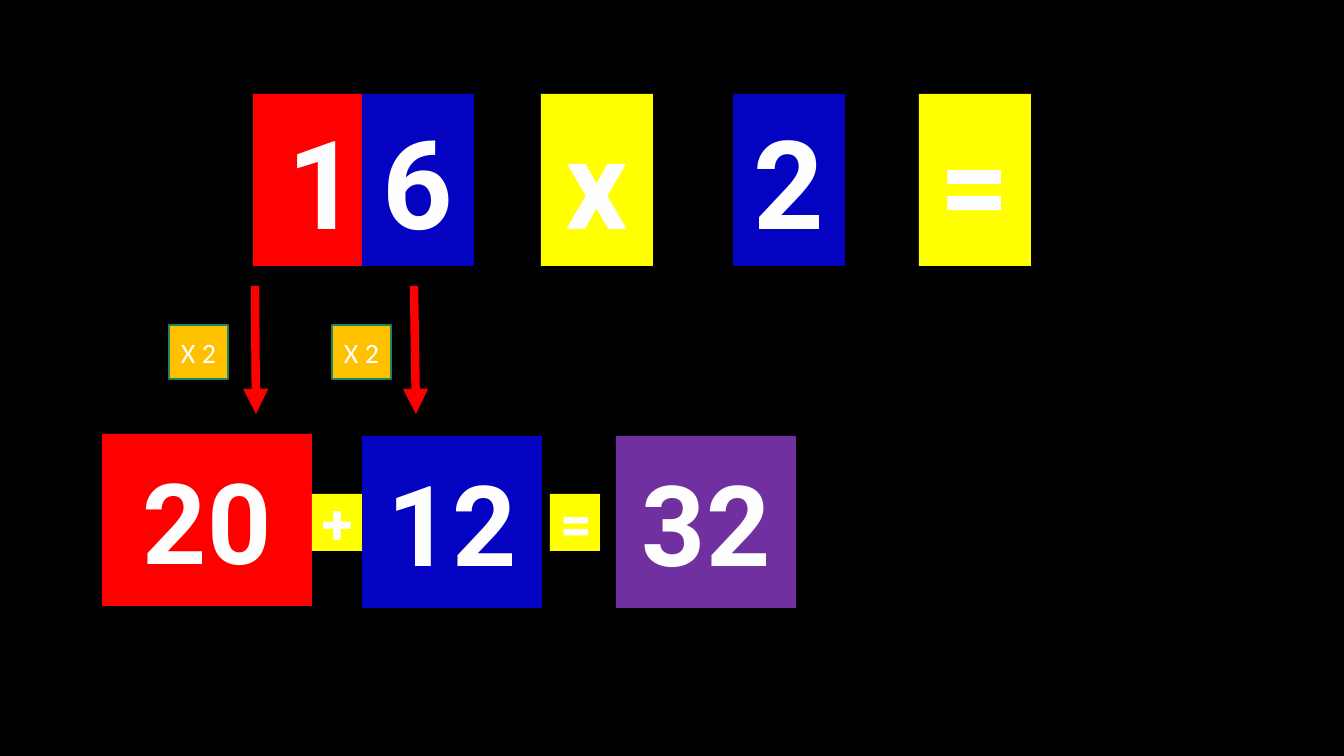
from dataclasses import dataclass

import lxml.etree
import pptx
import pptx.dml.color
import pptx.enum.shapes
import pptx.enum.text
import pptx.oxml
import pptx.oxml.ns
import pptx.util

EMU_PER_PX = 914400 / 100.8
BLACK = "000000"
RED = "FF0000"
BLUE = "0303C1"
YELLOW = "FFFF00"
PURPLE = "7030A0"
ORANGE = "FFC000"
TEAL = "1E8168"
GLYPH_EDGE = "29AF8C"

TILE_HEIGHT = 172
DIGIT_WIDTH = 112
RESULT_WIDTH = 180
PROBLEM_TOP = 94
SIGN_TOP = 494
FACTOR_TOP = 325
ARROW_TOP = 286
ARROW_BOTTOM = 414


@dataclass(frozen=True)
class Tile:
    text: str
    left: int
    top: int
    width: int
    fill: str
    size: int
    height: int = TILE_HEIGHT
    inset_left: int = 10
    inset_right: int = 10


@dataclass(frozen=True)
class Arrow:
    start_x: int
    end_x: int


PROBLEM = [
    Tile("1", 253, PROBLEM_TOP, 109, RED, 88, inset_left=31, inset_right=0),
    Tile("6", 362, PROBLEM_TOP, DIGIT_WIDTH, BLUE, 88),
    Tile("x", 541, PROBLEM_TOP, DIGIT_WIDTH, YELLOW, 88),
    Tile("2", 733, PROBLEM_TOP, DIGIT_WIDTH, BLUE, 88),
    Tile("=", 919, PROBLEM_TOP, DIGIT_WIDTH, YELLOW, 88),
]
ARROWS = [Arrow(255, 256), Arrow(414, 416)]
PARTIAL_PRODUCTS = [
    Tile("20", 102, 434, 210, RED, 80),
    Tile("12", 362, 436, RESULT_WIDTH, BLUE, 80),
]
FACTORS = [Tile("X 2", left, FACTOR_TOP, 59, ORANGE, 20, 54) for left in (169, 332)]
SUM = [
    Tile("+", 312, SIGN_TOP, 50, YELLOW, 40, 57),
    Tile("=", 550, SIGN_TOP, 50, YELLOW, 40, 57),
    Tile("32", 616, 436, RESULT_WIDTH, PURPLE, 80),
]


def px(length: int) -> pptx.util.Emu:
    return pptx.util.Emu(round(length * EMU_PER_PX))


def color(value: str) -> pptx.dml.color.RGBColor:
    return pptx.dml.color.RGBColor.from_string(value)


def write_text(frame, text: str, *, size: int, font: str, fill: str,
               bold: bool = False, edge: str = "",
               inset_left: int = 10, inset_right: int = 10) -> None:
    frame.word_wrap = True
    frame.vertical_anchor = pptx.enum.text.MSO_ANCHOR.MIDDLE
    frame.margin_left = px(inset_left)
    frame.margin_right = px(inset_right)
    paragraph = frame.paragraphs[0]
    paragraph.alignment = pptx.enum.text.PP_ALIGN.CENTER
    run = paragraph.add_run()
    run.text = text
    run.font.size = pptx.util.Pt(size)
    run.font.name = font
    run.font.bold = bold
    run.font.color.rgb = color(fill)
    if edge:
        properties = run.font._element
        properties.set("spc", "50")
        properties.insert(0, pptx.oxml.parse_xml(
            f'<a:ln {pptx.oxml.ns.nsdecls("a")} w="9525"><a:solidFill>'
            f'<a:srgbClr val="{edge}"/></a:solidFill></a:ln>'))


def draw_tile(slide, tile: Tile, *, border: str = "", font: str = "Roboto",
              text_fill: str = "FEFEFE", bold: bool = True,
              edge: str = GLYPH_EDGE) -> None:
    box = slide.shapes.add_shape(
        pptx.enum.shapes.MSO_SHAPE.RECTANGLE,
        px(tile.left), px(tile.top), px(tile.width), px(tile.height))
    box.shadow.inherit = False
    box.fill.solid()
    box.fill.fore_color.rgb = color(tile.fill)
    if border:
        box.line.color.rgb = color(border)
        box.line.width = pptx.util.Pt(1)
    else:
        box.line.fill.background()
    write_text(box.text_frame, tile.text, size=tile.size, font=font,
               fill=text_fill, bold=bold, edge=edge,
               inset_left=tile.inset_left, inset_right=tile.inset_right)


def draw_arrow(slide, arrow: Arrow) -> None:
    connector = slide.shapes.add_connector(
        pptx.enum.shapes.MSO_CONNECTOR.STRAIGHT,
        px(arrow.start_x), px(ARROW_TOP), px(arrow.end_x), px(ARROW_BOTTOM))
    connector.line.color.rgb = color(RED)
    connector.line.width = pptx.util.Pt(6)
    outline = connector.line._get_or_add_ln()
    lxml.etree.SubElement(outline, pptx.oxml.ns.qn("a:tailEnd"), type="triangle")
    lxml.etree.SubElement(connector._element.spPr, pptx.oxml.ns.qn("a:effectLst"))


def main() -> None:
    presentation = pptx.Presentation()
    presentation.slide_width = px(1344)
    presentation.slide_height = px(756)
    slide = presentation.slides.add_slide(presentation.slide_layouts[6])
    slide.background.fill.solid()
    slide.background.fill.fore_color.rgb = color(BLACK)

    for tile in PROBLEM:
        draw_tile(slide, tile)
    for arrow in ARROWS:
        draw_arrow(slide, arrow)
    for tile in PARTIAL_PRODUCTS:
        draw_tile(slide, tile)
    for factor in FACTORS:
        draw_tile(slide, factor, border=TEAL, font="Calibri",
                  text_fill="FFFFFF", bold=False, edge="")
    for tile in SUM:
        draw_tile(slide, tile)

    presentation.save("out.pptx")


if __name__ == "__main__":
    main()
